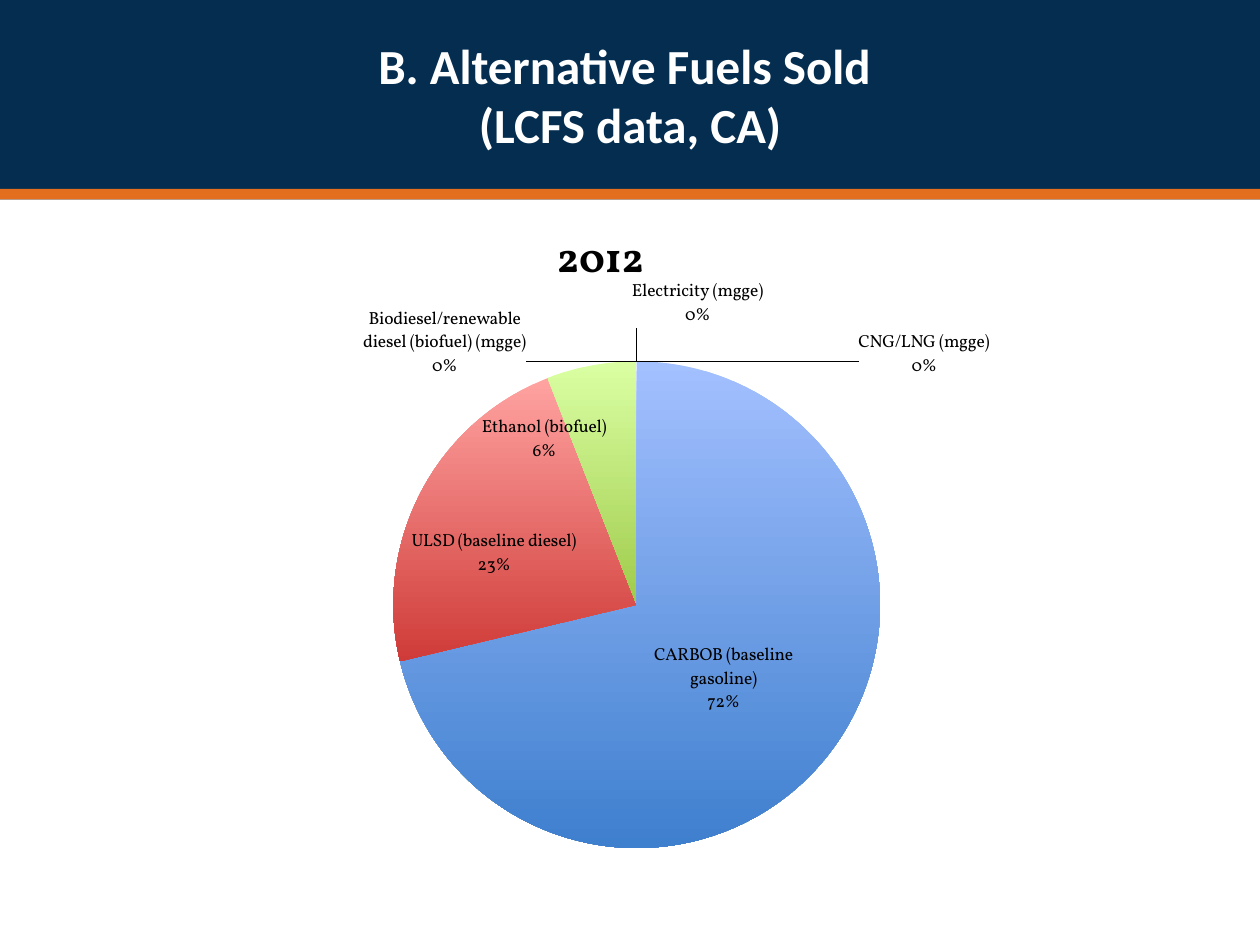
from lxml.etree import SubElement
from pptx import Presentation
from pptx.chart.data import CategoryChartData
from pptx.dml.color import RGBColor
from pptx.enum.chart import XL_CHART_TYPE, XL_LABEL_POSITION
from pptx.enum.shapes import MSO_SHAPE
from pptx.enum.text import MSO_ANCHOR, PP_ALIGN
from pptx.oxml import parse_xml
from pptx.oxml.ns import nsdecls, qn
from pptx.util import Inches, Pt

WIDTH, HEIGHT = Inches(10), Inches(7.5)
COLUMNS, ROWS = 120, 90
CENTER, OUTSIDE = XL_LABEL_POSITION.CENTER, XL_LABEL_POSITION.OUTSIDE_END
TRACE = 0.01
FUELS = [
    ("CARBOB (baseline gasoline)", 72, "A3C0FF", "3E7FCE",
     "CARBOB (baseline gasoline)\n72%", CENTER, -0.01, 0),
    ("ULSD (baseline diesel)", 23, "FFA3A1", "CF3B38", None, CENTER, -0.04, 0.01),
    ("Ethanol", 6, "DAFFA3", "9FCB4B", "Ethanol (biofuel)\n6%", CENTER, -0.08, -0.07),
    ("Biodiesel/renewable diesel (mgge)", TRACE, "C9B2E8", "7E5BA8",
     "Biodiesel/renewable diesel (biofuel) (mgge)\n0%", OUTSIDE, -0.22, 0.04),
    ("CNG/LNG (mgge)", TRACE, "9EEAFF", "36B1D2", None, OUTSIDE, 0.33, 0.04),
    ("Electricity (mgge)", TRACE, "FFBE86", "FF8F26", None, OUTSIDE, 0.07, -0.04),
]


def color(value):
    return RGBColor.from_string(value)


def apply_format(target, values):
    for name, value in values.items():
        setattr(target, name, value)


def set_layout(parent, index, **values):
    for old in parent.findall(qn("c:layout")):
        parent.remove(old)
    layout = parse_xml(f"<c:layout {nsdecls('c')}><c:manualLayout/></c:layout>")
    for name, value in values.items():
        SubElement(layout[0], qn(f"c:{name}")).set("val", str(value))
    parent.insert(index, layout)


class SlideBuilder:
    heading_font = {"name": "Calibri", "size": Pt(28), "bold": True}
    label_font = {"name": "Vollkorn", "size": Pt(10), "bold": False}
    chart_title_font = {"name": "Vollkorn", "size": Pt(24), "bold": True}

    def __init__(self, deck):
        self.page = deck.slides.add_slide(deck.slide_layouts[5])

    def place(self, column, row, columns, rows):
        across, down = WIDTH // COLUMNS, HEIGHT // ROWS
        return column * across, row * down, columns * across, rows * down

    def band(self, row, rows, fill):
        box = self.page.shapes.add_shape(
            MSO_SHAPE.RECTANGLE, *self.place(0, row, COLUMNS, rows))
        box.shadow.inherit = False
        box.fill.solid()
        box.fill.fore_color.rgb = color(fill)
        box.line.fill.background()

    def title(self, text, area):
        box = self.page.shapes.title
        self.page.shapes._spTree.append(box._element)
        apply_format(box, dict(zip(("left", "top", "width", "height"), self.place(*area))))
        box.text_frame.text = text
        box.text_frame.vertical_anchor = MSO_ANCHOR.MIDDLE
        para = box.text_frame.paragraphs[0]
        para.alignment = PP_ALIGN.CENTER
        for span in para.runs:
            apply_format(span.font, self.heading_font)
            span.font.color.rgb = color("FFFFFF")

    def pie(self, name, fuels, area, plot_area):
        data = CategoryChartData()
        data.categories = [fuel[0] for fuel in fuels]
        data.add_series(name, [fuel[1] for fuel in fuels])
        chart = self.page.shapes.add_chart(
            XL_CHART_TYPE.PIE, *self.place(*area), data).chart
        chart.has_legend = False
        apply_format(chart.font, self.label_font)
        chart.font.color.rgb = color("000000")
        chart.has_title = True
        chart.chart_title.text_frame.text = name
        title_font = chart.chart_title.text_frame.paragraphs[0].runs[0].font
        apply_format(title_font, self.chart_title_font)
        title_font.color.rgb = color("000000")
        set_layout(chart.chart_title._element, 1,
                   xMode="edge", yMode="edge", x=0.45, y=0)
        plot = chart.plots[0]
        plot.vary_by_categories = True
        series = plot.series[0]
        apply_format(series.data_labels, {
            "show_category_name": True, "show_percentage": True, "show_value": False})
        for index, fuel in enumerate(fuels):
            self.slice(series.points[index], *fuel[2:])
        set_layout(chart._chartSpace.chart.plotArea, 0, layoutTarget="inner",
                   xMode="edge", yMode="edge", **plot_area)

    def slice(self, point, light, dark, text, position, shift_x, shift_y):
        fill = point.format.fill
        fill.gradient()
        fill.gradient_angle = 270
        for stop, value in zip(fill.gradient_stops, (light, dark)):
            stop.color.rgb = color(value)
        point.format.line.fill.background()
        label = point.data_label
        label.position = position
        if text:
            label.text_frame.text = text
            for para in label.text_frame.paragraphs:
                for span in para.runs:
                    apply_format(span.font, self.label_font)
                    span.font.color.rgb = color("000000")
        label_xml = label._dLbl
        for flag, shown in (("showVal", 0), ("showCatName", 1), ("showPercent", 1)):
            label_xml.find(qn(f"c:{flag}")).set("val", str(shown))
        SubElement(label_xml, qn("c:separator")).text = "\n"
        set_layout(label_xml, 1, x=shift_x, y=shift_y)


def main():
    deck = Presentation()
    deck.slide_width, deck.slide_height = WIDTH, HEIGHT
    builder = SlideBuilder(deck)
    builder.band(0, 19, "042D50")
    builder.band(18, 1, "E36F1E")
    builder.title("B. Alternative Fuels Sold \v(LCFS data, CA)", (2, 2, 116, 14))
    builder.pie("2012", FUELS, (15, 21, 83, 61),
                {"x": 0.27, "y": 0.22, "w": 0.56, "h": 0.76})
    deck.save("out.pptx")


if __name__ == "__main__":
    main()
